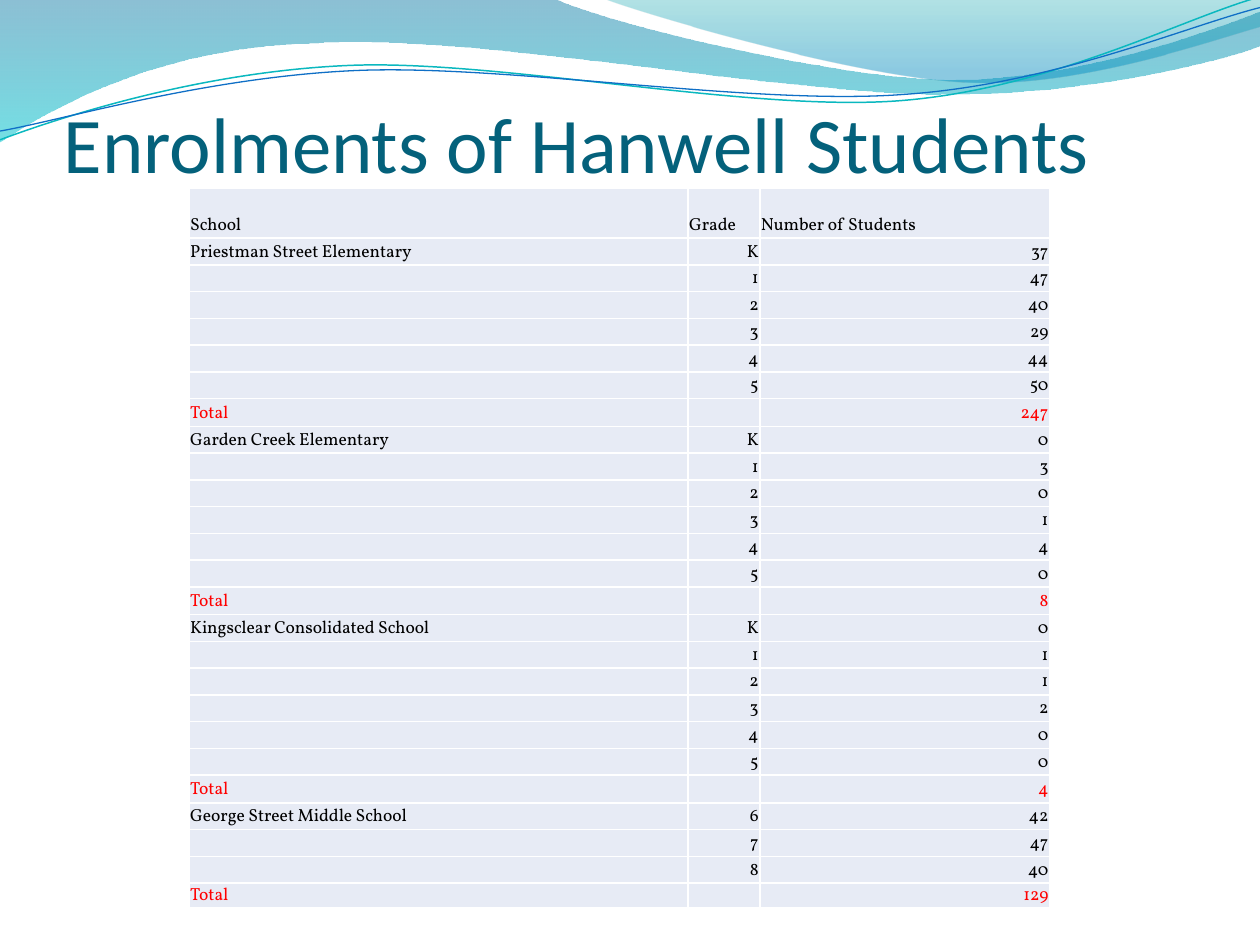
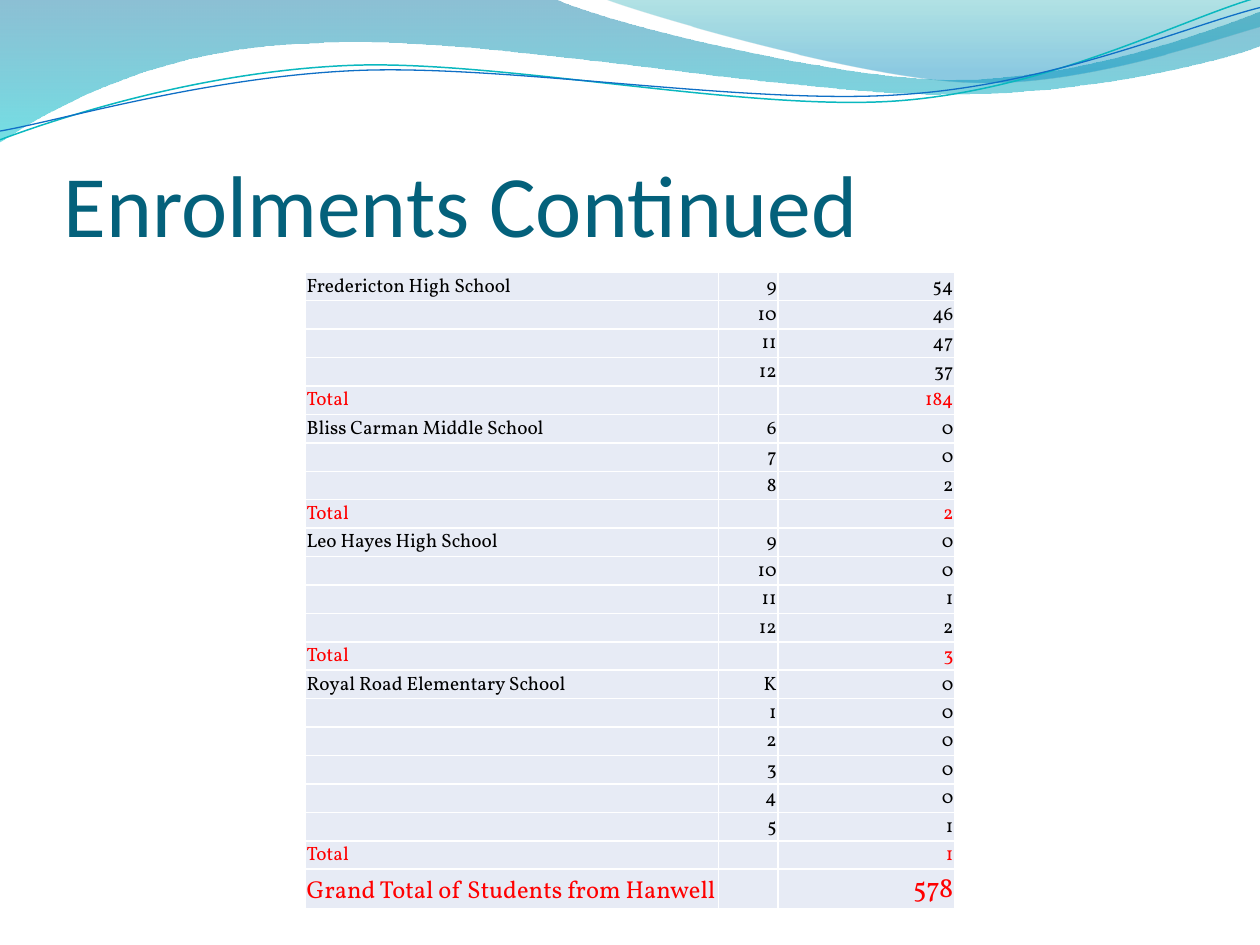
import math
from dataclasses import dataclass

from lxml import etree
from pptx import Presentation, util as u
from pptx.dml.color import RGBColor
from pptx.enum import text
from pptx.oxml.ns import qn

Pt = u.Pt


@dataclass(frozen=True)
class Theme:
    heading: str = "04617B"
    body: str = "000000"
    total: str = "FF0000"
    cell: str = "E7EBF5"
    border: str = "FFFFFF"
    heading_font: str = "Calibri"
    body_font: str = "Vollkorn"
    grand_label_size: float = 14
    grand_count_size: float = 16
    border_width: float = 1


@dataclass(frozen=True)
class Stop:
    position: float
    color: str
    alpha: int


@dataclass(frozen=True)
class Wave:
    box: tuple[float, float, float, float]
    start: tuple[float, float]
    segments: tuple[tuple[float, ...], ...]
    stops: tuple[Stop, ...] = ()
    line_color: str = ""
    line_width: float = 0
    rotation: float = 0


@dataclass(frozen=True)
class School:
    name: str
    grades: str
    counts: tuple[int, ...]


@dataclass(frozen=True)
class Row:
    label: str
    grade: str
    count: str
    height: float
    color: str
    label_size: float
    count_size: float


@dataclass(frozen=True)
class Page:
    title: str
    title_height: float
    title_size: float
    left: float
    top: float
    columns: tuple[float, ...]
    text_size: float
    row_height: float
    total_height: float
    last_height: float


THEME = Theme()

WAVES = (
    Wave(
        (-0.7, -0.7, 721.4, 82.1),
        (0, 0),
        (
            (316.8, -0.7),
            (342.7, 12.2, 478.1, 45.4, 545.8, 45.4),
            (614.2, 45.4, 689.8, 18.7, 720, 6.5),
            (720.7, 25.9),
            (707.8, 31.7, 626.4, 54.7, 537.1, 54),
            (447.8, 54, 275, 20.2, 185, 24.5),
            (92.9, 25.9, 33.1, 59.8, -0.7, 81.4),
            (0, 0),
        ),
        stops=(Stop(0, "0074A1", 45), Stop(1, "00C6CF", 55)),
    ),
    Wave(
        (344.9, -0.7, 375.1, 50.4),
        (344.9, -0.7),
        (
            (366.5, 7.9, 491, 44.6, 553.7, 46.8),
            (616.3, 49.7, 691.9, 23, 720, 15.1),
            (720, 0),
            (344.9, -0.7),
        ),
        stops=(Stop(0, "00A1A9", 30), Stop(0.8, "008BBF", 45)),
    ),
    Wave(
        (-1.4, 15.8, 721.4, 51.1),
        (0, 79.9),
        (
            (34.6, 67, 113.8, 41, 199.4, 37.4),
            (284.4, 33.8, 427, 64.1, 513.4, 57.6),
            (599.8, 51.1, 675.4, 10.8, 718.6, -1.4),
        ),
        line_color="0AB8BF",
        line_width=0.85,
        rotation=357.3,
    ),
    Wave(
        (-1.4, 21.6, 722.2, 41.8),
        (0, 74.9),
        (
            (33.8, 69.1, 118.1, 43.9, 203.8, 40.3),
            (290.2, 36.7, 429.8, 60.5, 516.2, 54),
            (601.9, 48.2, 677.5, 15.1, 720, 4.3),
        ),
        line_color="0F6FC6",
        line_width=0.75,
        rotation=357.3,
    ),
)

FIRST_SCHOOLS = (
    School("Priestman Street Elementary", "K 1 2 3 4 5", (37, 47, 40, 29, 44, 50)),
    School("Garden Creek Elementary", "K 1 2 3 4 5", (0, 3, 0, 1, 4, 0)),
    School("Kingsclear Consolidated School", "K 1 2 3 4 5", (0, 1, 1, 2, 0, 0)),
    School("George Street Middle School", "6 7 8", (42, 47, 40)),
)
MORE_SCHOOLS = (
    School("Fredericton High School", "9 10 11 12", (54, 46, 47, 37)),
    School("Bliss Carman Middle School", "6 7 8", (0, 0, 2)),
    School("Leo Hayes High School", "9 10 11 12", (0, 0, 1, 2)),
    School("Royal Road Elementary School", "K 1 2 3 4 5", (0, 0, 0, 0, 0, 1)),
)

FIRST_PAGE = Page(
    "Enrolments of Hanwell Students", 52.5, 45, 108, 107.6, (285.1, 41.1, 165.6), 10, 15.3, 15.9, 14.4
)
SECOND_PAGE = Page(
    "Enrolments Continued", 90, 50, 174.5, 155.6, (236, 34, 101), 11, 16.27, 16.27, 16.27
)


def rgb(color: str) -> RGBColor:
    return RGBColor.from_string(color)


def add_command(outline, wave: Wave, tag: str, coordinates: tuple[float, ...]) -> None:
    left, top, width, height = wave.box
    middle_x, middle_y = left + width / 2, top + height / 2
    turn = math.radians(-wave.rotation)
    command = etree.SubElement(outline, qn(tag))
    for x, y in zip(coordinates[::2], coordinates[1::2]):
        dx, dy = x - middle_x, y - middle_y
        local_x = width / 2 + dx * math.cos(turn) - dy * math.sin(turn)
        local_y = height / 2 + dx * math.sin(turn) + dy * math.cos(turn)
        etree.SubElement(command, qn("a:pt"), x=str(Pt(local_x)), y=str(Pt(local_y)))


def draw_wave(slide, wave: Wave) -> None:
    builder = slide.shapes.build_freeform(Pt(wave.start[0]), Pt(wave.start[1]))
    ends = [(Pt(segment[-2]), Pt(segment[-1])) for segment in wave.segments]
    builder.add_line_segments(ends, close=False)
    ribbon = builder.convert_to_shape()
    ribbon.left, ribbon.top, ribbon.width, ribbon.height = map(Pt, wave.box)
    ribbon.rotation = wave.rotation
    ribbon.shadow.inherit = False

    outline = next(ribbon._element.spPr.iter(qn("a:path")))
    for command in list(outline):
        outline.remove(command)
    outline.set("w", str(ribbon.width))
    outline.set("h", str(ribbon.height))
    add_command(outline, wave, "a:moveTo", wave.start)
    for segment in wave.segments:
        add_command(outline, wave, "a:lnTo" if len(segment) == 2 else "a:cubicBezTo", segment)

    if not wave.stops:
        ribbon.fill.background()
        ribbon.line.color.rgb = rgb(wave.line_color)
        ribbon.line.width = Pt(wave.line_width)
        return
    etree.SubElement(outline, qn("a:close"))
    ribbon.line.fill.background()
    ribbon.fill.gradient()
    ribbon.fill.gradient_angle = 270
    for target, stop in zip(ribbon.fill.gradient_stops, wave.stops):
        target.position = stop.position
        target.color.rgb = rgb(stop.color)
    for color, stop in zip(ribbon._element.spPr.iter(qn("a:srgbClr")), wave.stops):
        etree.SubElement(color, qn("a:alpha"), val=str(stop.alpha * 1000))


def format_run(run, font: str, size: float, color: str) -> None:
    run.font.name = font
    run.font.size = Pt(size)
    run.font.color.rgb = rgb(color)


def draw_title(slide, page: Page) -> None:
    heading = slide.shapes.add_textbox(Pt(36.4), Pt(55.5), Pt(648), Pt(page.title_height))
    frame = heading.text_frame
    frame.word_wrap = True
    frame.vertical_anchor = text.MSO_ANCHOR.BOTTOM
    frame.margin_left = frame.margin_right = frame.margin_bottom = 0
    frame.margin_top = Pt(3.6)
    frame.text = page.title
    format_run(frame.paragraphs[0].runs[0], THEME.heading_font, page.title_size, THEME.heading)


def school_rows(schools: tuple[School, ...], page: Page) -> list[Row]:
    rows, size = [], page.text_size
    for school in schools:
        for index, (grade, count) in enumerate(zip(school.grades.split(), school.counts)):
            name = "" if index else school.name
            rows.append(Row(name, grade, str(count), page.row_height, THEME.body, size, size))
        height = page.last_height if school is schools[-1] else page.total_height
        rows.append(Row("Total", "", str(sum(school.counts)), height, THEME.total, size, size))
    return rows


def draw_borders(cell) -> None:
    properties = cell._tc.get_or_add_tcPr()
    for side in ("lnL", "lnR", "lnT", "lnB"):
        edge = etree.SubElement(properties, qn(f"a:{side}"), w=str(Pt(THEME.border_width)))
        fill = etree.SubElement(edge, qn("a:solidFill"))
        etree.SubElement(fill, qn("a:srgbClr"), val=THEME.border)


def fill_cell(cell, words: str, size: float, color: str, align) -> None:
    draw_borders(cell)
    cell.fill.solid()
    cell.fill.fore_color.rgb = rgb(THEME.cell)
    cell.vertical_anchor = text.MSO_ANCHOR.BOTTOM
    cell.margin_left = cell.margin_right = cell.margin_top = Pt(0.7)
    cell.margin_bottom = 0
    paragraph = cell.text_frame.paragraphs[0]
    paragraph.alignment = align
    if words:
        paragraph.text = words
        format_run(paragraph.runs[0], THEME.body_font, size, color)
    else:
        ending = etree.SubElement(paragraph._p, qn("a:endParaRPr"), sz=str(size * 100))
        etree.SubElement(ending, qn("a:latin"), typeface=THEME.body_font)


def draw_enrolments(slide, page: Page, rows: list[Row], has_header: bool) -> None:
    enrolments = slide.shapes.add_table(
        len(rows), len(page.columns), Pt(page.left), Pt(page.top),
        Pt(sum(page.columns)), Pt(sum(row.height for row in rows)),
    ).table
    enrolments.first_row = enrolments.horz_banding = False
    for column, width in zip(enrolments.columns, page.columns):
        column.width = Pt(width)
    for index, row in enumerate(rows):
        enrolments.rows[index].height = Pt(row.height)
        is_header = has_header and index == 0
        number_align = text.PP_ALIGN.LEFT if is_header else text.PP_ALIGN.RIGHT
        label, grade, count = enrolments.rows[index].cells
        fill_cell(label, row.label, row.label_size, row.color, text.PP_ALIGN.LEFT)
        fill_cell(grade, row.grade, page.text_size, row.color, number_align)
        fill_cell(count, row.count, row.count_size, row.color, number_align)


def draw_page(deck, page: Page, rows: list[Row], has_header: bool = False) -> None:
    slide = deck.slides.add_slide(deck.slide_layouts[6])
    for wave in WAVES:
        draw_wave(slide, wave)
    draw_title(slide, page)
    draw_enrolments(slide, page, rows, has_header)


def main() -> None:
    deck = Presentation()
    deck.slide_width, deck.slide_height = Pt(720), Pt(540)
    size = FIRST_PAGE.text_size
    header = Row("School", "Grade", "Number of Students", 28.5, THEME.body, size, size)
    draw_page(deck, FIRST_PAGE, [header, *school_rows(FIRST_SCHOOLS, FIRST_PAGE)], has_header=True)
    everyone = sum(sum(school.counts) for school in FIRST_SCHOOLS + MORE_SCHOOLS)
    grand_total = Row(
        "Grand Total of Students from Hanwell", "", str(everyone), 22.9,
        THEME.total, THEME.grand_label_size, THEME.grand_count_size,
    )
    draw_page(deck, SECOND_PAGE, [*school_rows(MORE_SCHOOLS, SECOND_PAGE), grand_total])
    deck.save("out.pptx")


if __name__ == "__main__":
    main()
